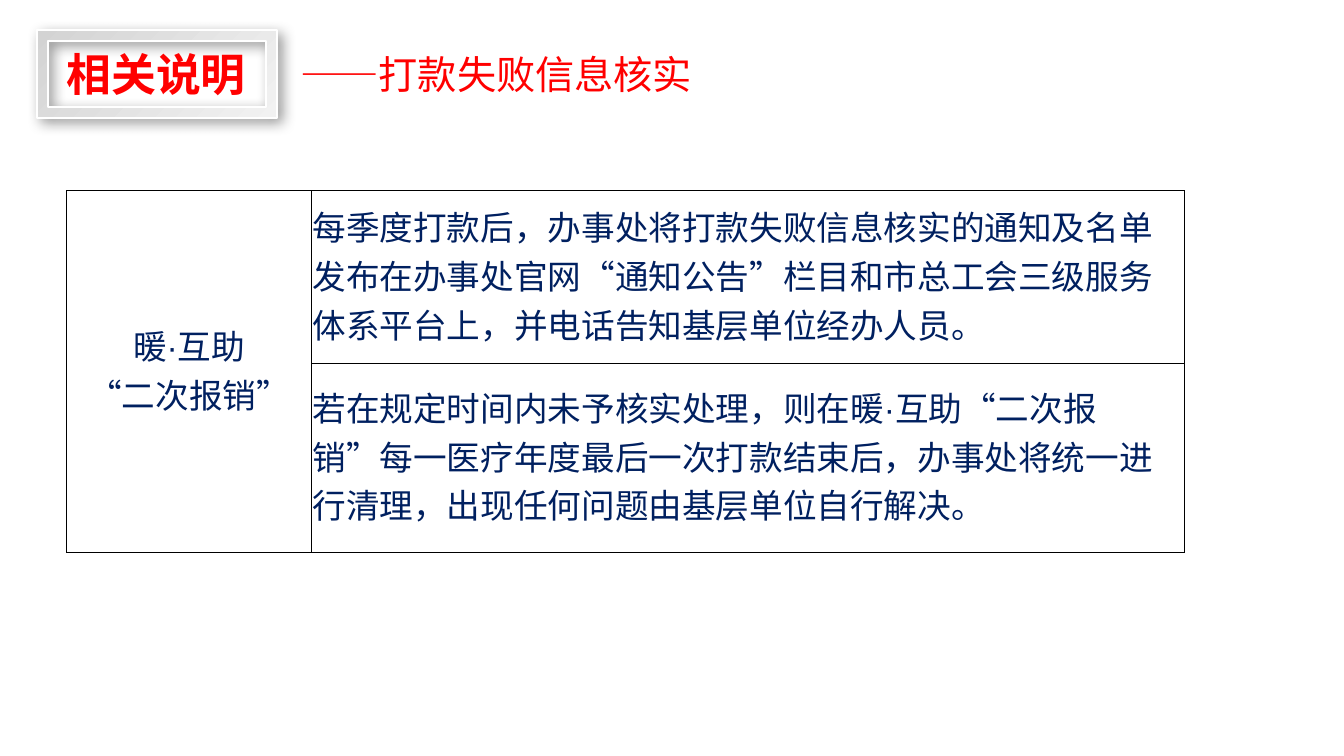
from dataclasses import dataclass

from lxml import etree
from pptx import Presentation
from pptx import util as u
from pptx.dml.color import RGBColor
from pptx.enum import lang, shapes, text
from pptx.oxml import parse_xml
from pptx.oxml.ns import nsdecls, qn


@dataclass(frozen=True)
class Theme:
    red: str = "FF0000"
    navy: str = "002060"
    black: str = "000000"
    frame_dark: str = "D3D3D3"
    frame_light: str = "F2F2F2"
    frame_edge: str = "FFFFFF"
    title_size: float = 32
    subtitle_size: float = 28
    body_size: float = 24
    frame_line: float = 1.5
    table_line: float = 0.5
    cjk_font: str = "Noto Sans CJK SC"
    latin_font: str = "Arial"


class SlideBuilder:
    def __init__(self, slide, theme):
        self.slide = slide
        self.theme = theme

    def style_runs(self, tf, size, color, font, bold=False):
        for p in tf.paragraphs:
            for r in p.runs:
                r.font.size = u.Pt(size)
                r.font.bold = bold
                r.font.color.rgb = RGBColor.from_string(color)
                r.font.name = font
                r.font.language_id = lang.MSO_LANGUAGE_ID.SIMPLIFIED_CHINESE
                ea = etree.Element(qn("a:ea"), typeface=self.theme.cjk_font)
                r.font._element.find(qn("a:latin")).addnext(ea)

    def frame(self, box):
        t = self.theme
        sp = self.slide.shapes.add_shape(
            shapes.MSO_SHAPE.FRAME, *map(u.Inches, box))
        sp.fill.gradient()
        sp.fill.gradient_angle = 315
        for stop, color in zip(sp.fill.gradient_stops,
                               (t.frame_dark, t.frame_light)):
            stop.color.rgb = RGBColor.from_string(color)
        sp.line.color.rgb = RGBColor.from_string(t.frame_edge)
        sp.line.width = u.Pt(t.frame_line)
        sp.shadow.inherit = False
        effects = sp._element.spPr.find(qn("a:effectLst"))
        effects.append(parse_xml(
            f'<a:outerShdw {nsdecls("a")} blurRad="{u.Pt(10)}" '
            f'dist="{u.Pt(4)}" dir="2700000" algn="tl" rotWithShape="0">'
            f'<a:srgbClr val="{t.black}"><a:alpha val="40000"/></a:srgbClr>'
            '</a:outerShdw>'))

    def label(self, box, content, size, bold=False, wrap=True, inset=None):
        sp = self.slide.shapes.add_textbox(*map(u.Inches, box))
        tf = sp.text_frame
        tf.text = content
        tf.word_wrap = wrap
        tf.auto_size = text.MSO_AUTO_SIZE.SHAPE_TO_FIT_TEXT
        if inset is not None:
            tf.margin_left = tf.margin_right = u.Inches(inset)
            tf.margin_top = tf.margin_bottom = u.Inches(inset)
        self.style_runs(tf, size, self.theme.red, self.theme.cjk_font, bold)

    def border(self, cell):
        t = self.theme
        tc_pr = cell._tc.get_or_add_tcPr()
        for i, side in enumerate(("lnL", "lnR", "lnT", "lnB")):
            tc_pr.insert(i, parse_xml(
                f'<a:{side} {nsdecls("a")} w="{u.Pt(t.table_line)}">'
                f'<a:solidFill><a:srgbClr val="{t.black}"/></a:solidFill>'
                f'</a:{side}>'))

    def table(self, left, top, widths, heights, topic, notes):
        t = self.theme
        frame = self.slide.shapes.add_table(
            len(heights), len(widths), u.Inches(left), u.Inches(top),
            u.Inches(sum(widths)), u.Inches(sum(heights)))
        table = frame.table
        table.first_row = table.horz_banding = False
        for column, width in zip(table.columns, widths):
            column.width = u.Inches(width)
        for row, height in zip(table.rows, heights):
            row.height = u.Inches(height)
        table.cell(0, 0).merge(table.cell(len(heights) - 1, 0))
        table.cell(0, 0).text = topic
        for i, note in enumerate(notes):
            table.cell(i, 1).text = note
        for cell in table.iter_cells():
            cell.fill.background()
            cell.vertical_anchor = text.MSO_ANCHOR.MIDDLE
            cell.margin_left = cell.margin_right = u.Inches(0.01)
            cell.margin_top = u.Inches(0.01)
            cell.margin_bottom = u.Inches(0.05)
            self.border(cell)
            self.style_runs(cell.text_frame, t.body_size, t.navy,
                            t.latin_font)
        for p in table.cell(0, 0).text_frame.paragraphs:
            p.alignment = text.PP_ALIGN.CENTER


def main():
    prs = Presentation()
    prs.slide_width, prs.slide_height = u.Inches(13.33), u.Inches(7.5)
    theme = Theme()
    page = SlideBuilder(prs.slides.add_slide(prs.slide_layouts[6]), theme)

    page.frame((0.37, 0.3, 2.38, 0.87))
    page.label((0.56, 0.41, 1.99, 0.64), "相关说明", theme.title_size,
               bold=True, wrap=False)
    page.label((2.98, 0.5, 5.63, 0.47), "——打款失败信息核实",
               theme.subtitle_size, inset=0)
    page.table(
        0.66, 1.89, (2.43, 8.66), (1.71, 1.88),
        "暖·互助\n“二次报销”",
        ("每季度打款后，办事处将打款失败信息核实的通知及名单发布在办事处官网“通知公告”"
         "栏目和市总工会三级服务体系平台上，并电话告知基层单位经办人员。",
         "若在规定时间内未予核实处理，则在暖·互助“二次报销”每一医疗年度最后一次打款"
         "结束后，办事处将统一进行清理，出现任何问题由基层单位自行解决。"))
    prs.save("out.pptx")


if __name__ == "__main__":
    main()
